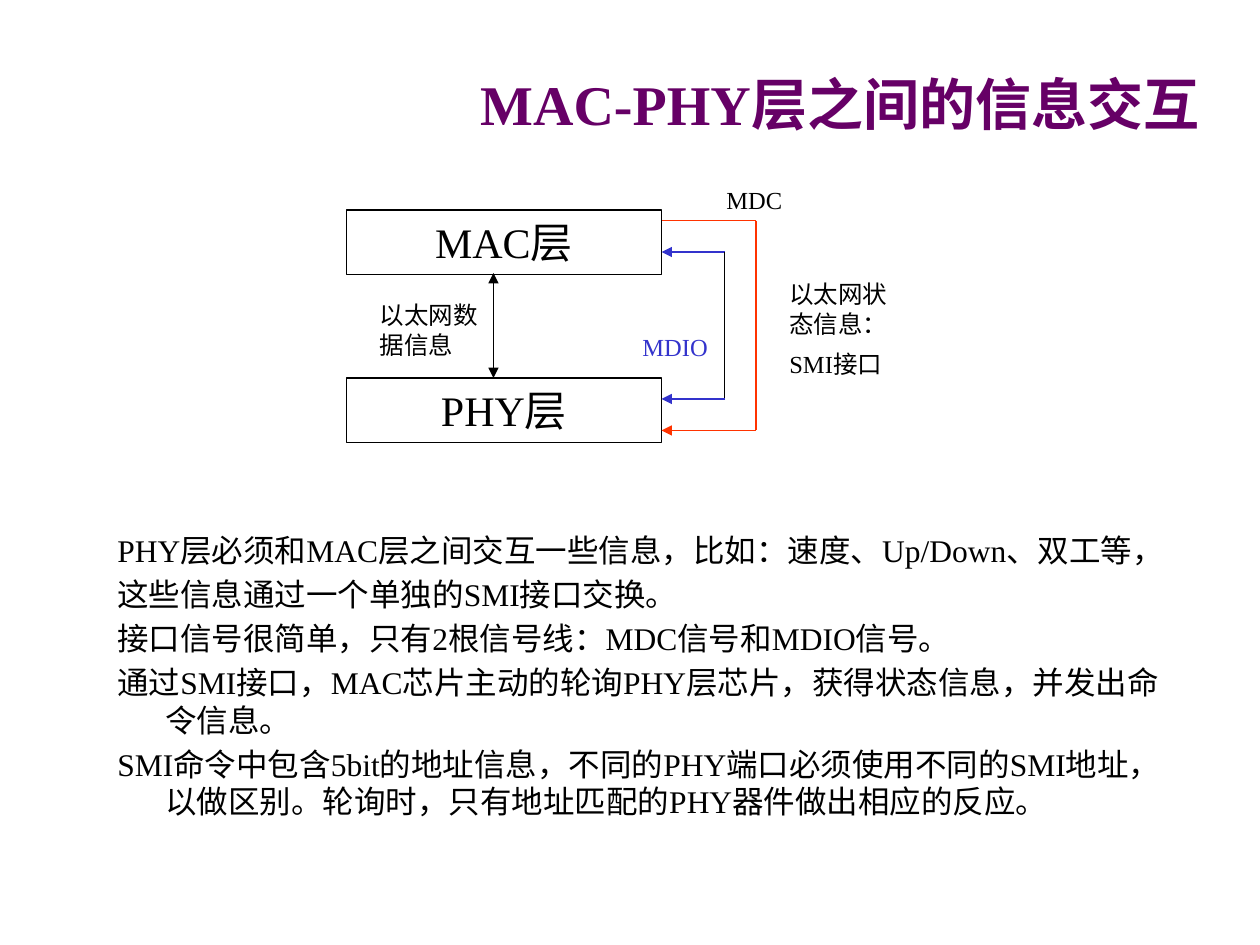
from lxml import etree
from pptx import Presentation
from pptx.dml.color import RGBColor
from pptx.enum.shapes import MSO_CONNECTOR, MSO_SHAPE
from pptx.enum.text import MSO_ANCHOR, MSO_AUTO_SIZE, PP_ALIGN
from pptx.oxml.ns import qn
from pptx.util import Inches, Pt

STRAIGHT = MSO_CONNECTOR.STRAIGHT
RECTANGLE = MSO_SHAPE.RECTANGLE
TOP = MSO_ANCHOR.TOP
NO_FIT = MSO_AUTO_SIZE.NONE
LEFT, CENTER = PP_ALIGN.LEFT, PP_ALIGN.CENTER

BLACK = RGBColor(0x00, 0x00, 0x00)
WHITE = RGBColor(0xFF, 0xFF, 0xFF)
PURPLE = RGBColor(0x66, 0x00, 0x66)
BLUE = RGBColor(0x33, 0x33, 0xCC)
RED = RGBColor(0xFF, 0x33, 0x00)

FONT = "Times New Roman"
TITLE_ONLY = 5
CELL = Inches(1) / 12  # grid of 120 columns by 90 rows

TITLE = "MAC-PHY层之间的信息交互"
NOTES = [
    "PHY层必须和MAC层之间交互一些信息，比如：速度、Up/Down、双工等，",
    "这些信息通过一个单独的SMI接口交换。",
    "接口信号很简单，只有2根信号线：MDC信号和MDIO信号。",
    "通过SMI接口，MAC芯片主动的轮询PHY层芯片，获得状态信息，并发出命令信息。",
    "SMI命令中包含5bit的地址信息，不同的PHY端口必须使用不同的SMI地址，"
    "以做区别。轮询时，只有地址匹配的PHY器件做出相应的反应。",
]


def grid(*cells):
    return [round(cell * CELL) for cell in cells]


def write(shape, lines, size, color=BLACK, align=LEFT, gap=0, hanging=0, bold=False):
    frame = shape.text_frame
    frame.word_wrap = True
    frame.auto_size = NO_FIT
    frame.vertical_anchor = TOP
    frame.text = "\n".join(lines)
    for index, paragraph in enumerate(frame.paragraphs):
        paragraph.alignment = align
        if index:
            paragraph.space_before = Pt(gap)
        if hanging:
            properties = paragraph._p.get_or_add_pPr()
            properties.set("marL", str(hanging))
            properties.set("indent", str(-hanging))
        font = paragraph.font
        font.name, font.size, font.bold = FONT, Pt(size), bold
        font.color.rgb = color


def add_panel(slide, box, fill=None, line=None):
    panel = slide.shapes.add_shape(RECTANGLE, *grid(*box))
    panel.shadow.inherit = False
    if fill is None:
        panel.fill.background()
    else:
        panel.fill.solid()
        panel.fill.fore_color.rgb = fill
    if line is None:
        panel.line.fill.background()
    else:
        panel.line.color.rgb = line
        panel.line.width = Pt(0.75)
    return panel


def add_line(slide, start, end, color, ends=()):
    line = slide.shapes.add_connector(STRAIGHT, *grid(*start, *end))
    line.line.color.rgb = color
    line.line.width = Pt(1)
    outline = line.line._get_or_add_ln()
    for end_tag in ends:
        etree.SubElement(outline, qn(end_tag)).set("type", "triangle")
    etree.SubElement(line._element.spPr, qn("a:effectLst"))


def add_title(slide, box):
    title = slide.shapes.title
    title.left, title.top, title.width, title.height = grid(*box)
    title.fill.solid()
    title.fill.fore_color.rgb = WHITE
    write(title, [TITLE], 32, PURPLE, CENTER, bold=True)


def add_signal(slide, near, far, top, bottom, color, riser_color, both_ways):
    """Bracket from the MAC layer out to the riser and back to the PHY layer."""
    arrow = ["a:tailEnd"]
    add_line(slide, (far, top), (near, top), color, arrow if both_ways else ())
    add_line(slide, (far, top), (far, bottom), riser_color)
    add_line(slide, (far, bottom), (near, bottom), color, arrow)


def add_diagram(slide, left, top):
    layer_width, layer_height, layer_step = 30, 6.12, 16
    right = left + layer_width

    # Layers and the data path between them
    for index, name in enumerate(["MAC层", "PHY层"]):
        box = (left, top + 3 + index * layer_step, layer_width, layer_height)
        write(add_panel(slide, box, line=BLACK), [name], 24, align=CENTER)
    add_line(slide, (left + 14, top + 9), (left + 14, top + 19), BLACK,
             ["a:headEnd", "a:tailEnd"])

    # Signals of the management interface
    add_signal(slide, right, right + 6, top + 7, top + 21, BLUE, BLACK, True)
    add_signal(slide, right, right + 9, top + 4, top + 24, RED, RED, False)

    # Labels, placed from the corner of the diagram
    labels = [
        (2, 11, 12, 6.84, ["以太网数据信息"], BLACK),
        (41, 9, 12, 10.92, ["以太网状态信息：", "SMI接口"], BLACK),
        (35, 0, 8, 4, ["MDC"], BLACK),
        (27, 14, 9, 4, ["MDIO"], BLUE),
    ]
    for column, row, width, height, lines, color in labels:
        box = grid(left + column, top + row, width, height)
        write(slide.shapes.add_textbox(*box), lines, 14, color, gap=6.5)


def add_notes(slide, box):
    write(add_panel(slide, box, fill=WHITE), NOTES, 18, gap=3.5, hanging=Inches(0.38))


def main():
    deck = Presentation()
    deck.slide_width, deck.slide_height = grid(120, 90)
    slide = deck.slides.add_slide(deck.slide_layouts[TITLE_ONLY])
    add_title(slide, (44, 6, 72, 8))
    add_diagram(slide, 33, 17)
    add_notes(slide, (10, 50, 103, 29))
    deck.save("out.pptx")


if __name__ == "__main__":
    main()
